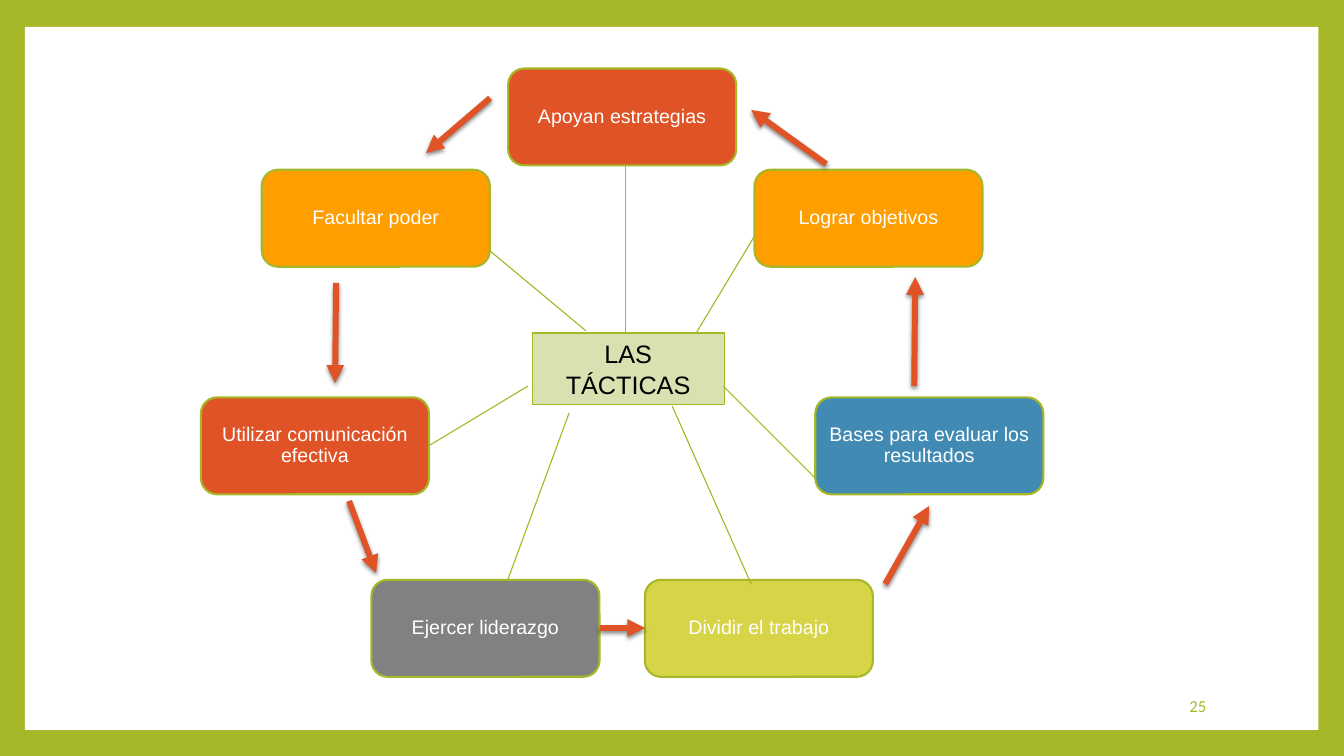
from math import cos, pi, sin

from lxml import etree
from pptx import Presentation
from pptx import util as u
from pptx.dml.color import RGBColor
from pptx.enum import shapes, text
from pptx.oxml.ns import qn

GREEN = RGBColor(0xA6, 0xB7, 0x27)
PALE_GREEN = RGBColor(0xD8, 0xE1, 0xB0)
RED = RGBColor(0xDF, 0x53, 0x27)
ORANGE = RGBColor(0xFE, 0x9E, 0x00)
BLUE = RGBColor(0x41, 0x8A, 0xB3)
YELLOW = RGBColor(0xD7, 0xD4, 0x47)
GRAY = RGBColor(0x81, 0x81, 0x83)
WHITE = RGBColor(0xFF, 0xFF, 0xFF)
BLACK = RGBColor(0, 0, 0)

RING_CENTER = 622, 386
RING_RADII = 315, 269
TACTIC_SIZE = 228, 97

# Clockwise from the top of the ring
TACTICS = [
    ("Apoyan estrategias", RED),
    ("Lograr objetivos", ORANGE),
    ("Bases para evaluar los resultados", BLUE),
    ("Dividir el trabajo", YELLOW),
    ("Ejercer liderazgo", GRAY),
    ("Utilizar comunicación efectiva", RED),
    ("Facultar poder", ORANGE),
]
ARROWS = [
    (349, 501, 376, 573),
    (600, 628, 645, 628),
    (885, 584, 929, 506),
    (914, 386, 915, 277),
    (336, 283, 335, 383),
    (490, 98, 426, 153),
    (826, 164, 751, 110),
]
SPOKES = [
    (625, 333, 625, 166),
    (815, 478, 723, 386),
    (586, 331, 490, 251),
    (696, 333, 755, 235),
    (430, 445, 528, 386),
    (751, 584, 672, 406),
    (508, 579, 569, 413),
]


class Diagram:
    def __init__(self, slide):
        self.slide = slide

    def px(self, *lengths):
        """Turn pixels (100.8 to the inch) into EMU."""
        return [u.Emu(round(length * 914400 / 100.8)) for length in lengths]

    def box(self, kind, bounds, fill, line_width=0):
        shape = self.slide.shapes.add_shape(kind, *self.px(*bounds))
        shape.shadow.inherit = False
        shape.fill.solid()
        shape.fill.fore_color.rgb = fill
        if line_width:
            shape.line.color.rgb = GREEN
            shape.line.width = u.Pt(line_width)
        else:
            shape.line.fill.background()
        return shape

    def label(self, shape, words, size, color, font="Arial",
              align=text.PP_ALIGN.CENTER, spacing=1.0):
        frame = shape.text_frame
        frame.word_wrap = True
        frame.vertical_anchor = text.MSO_ANCHOR.MIDDLE
        paragraph = frame.paragraphs[0]
        paragraph.text = words
        paragraph.alignment = align
        paragraph.line_spacing = spacing
        paragraph.font.name = font
        paragraph.font.size = u.Pt(size)
        paragraph.font.color.rgb = color

    def tactic(self, index, words, fill):
        """Place one box on the ring, by its clockwise position."""
        angle = 2 * pi * index / len(TACTICS)
        width, height = TACTIC_SIZE
        left = RING_CENTER[0] + RING_RADII[0] * sin(angle) - width / 2
        top = RING_CENTER[1] - RING_RADII[1] * cos(angle) - height / 2
        shape = self.box(shapes.MSO_SHAPE.ROUNDED_RECTANGLE,
                         (left, top, width, height), fill, 1.5)
        frame = shape.text_frame
        frame.margin_left = frame.margin_right = u.Inches(0.08)
        frame.margin_top = frame.margin_bottom = u.Inches(0.08)
        self.label(shape, words, 14, WHITE, spacing=0.9)

    def line(self, ends, color, width):
        """Draw a line and return its properties and empty effect list."""
        connector = self.slide.shapes.add_connector(
            shapes.MSO_CONNECTOR.STRAIGHT, *self.px(*ends))
        connector.line.color.rgb = color
        connector.line.width = u.Pt(width)
        properties = connector._element.spPr
        return properties, etree.SubElement(properties, qn("a:effectLst"))

    def arrow(self, ends):
        properties, effects = self.line(ends, RED, 4.25)
        etree.SubElement(properties.find(qn("a:ln")), qn("a:tailEnd"),
                         type="triangle")
        shadow = etree.SubElement(
            effects, qn("a:outerShdw"), blurRad=str(int(u.Pt(3))),
            dist=str(int(u.Pt(2))), dir="5400000", rotWithShape="0")
        color = etree.SubElement(shadow, qn("a:srgbClr"), val=str(BLACK))
        etree.SubElement(color, qn("a:alpha"), val="45000")

    def page_number(self, bounds, number):
        shape = self.slide.shapes.add_textbox(*self.px(*bounds))
        self.label(shape, number, 12, GREEN, "Calibri", text.PP_ALIGN.RIGHT)


def main():
    presentation = Presentation()
    presentation.slide_width = u.Inches(13.33)
    presentation.slide_height = u.Inches(7.5)
    slide = presentation.slides.add_slide(presentation.slide_layouts[6])
    slide.background.fill.solid()
    slide.background.fill.fore_color.rgb = GREEN

    diagram = Diagram(slide)
    rectangle = shapes.MSO_SHAPE.RECTANGLE
    diagram.box(rectangle, (25, 27, 1293, 703), WHITE)
    hub = diagram.box(rectangle, (532, 333, 192, 72), PALE_GREEN, 0.79)
    diagram.label(hub, "LAS TÁCTICAS", 18, BLACK)
    for index, (words, fill) in enumerate(TACTICS):
        diagram.tactic(index, words, fill)
    for ends in ARROWS:
        diagram.arrow(ends)
    for ends in SPOKES:
        diagram.line(ends, GREEN, 0.79)
    diagram.page_number((1028, 686, 188, 40), "25")

    presentation.save("out.pptx")


if __name__ == "__main__":
    main()
